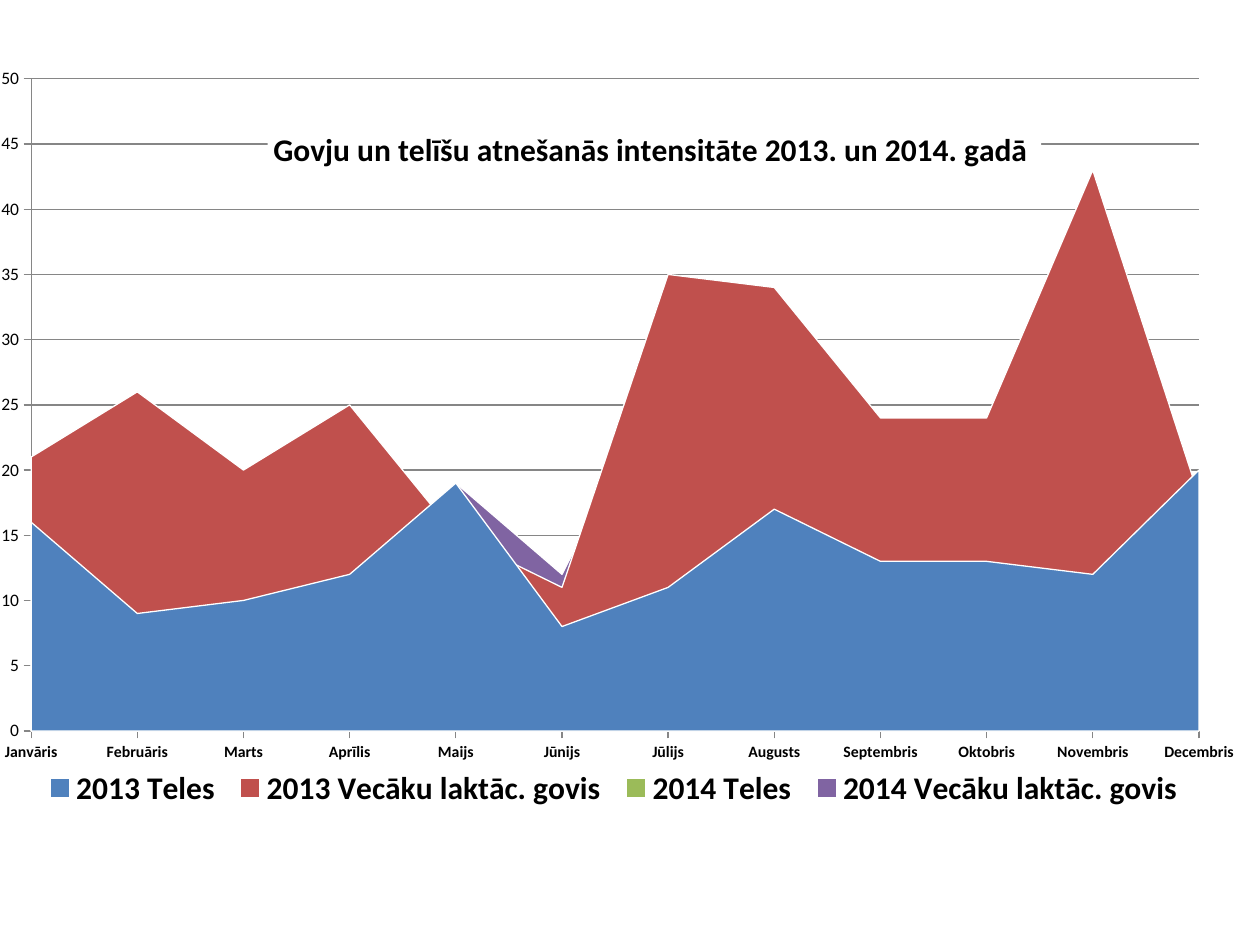
from dataclasses import dataclass

from lxml.etree import SubElement
from pptx import Presentation
from pptx.chart.data import CategoryChartData
from pptx.dml.color import RGBColor
from pptx.enum.chart import XL_CHART_TYPE, XL_LEGEND_POSITION, XL_TICK_MARK
from pptx.oxml import parse_xml
from pptx.oxml.ns import nsdecls, qn
from pptx.util import Cm, Pt

BLACK = RGBColor(0x00, 0x00, 0x00)
WHITE = RGBColor(0xFF, 0xFF, 0xFF)
GRAY = RGBColor(0x86, 0x86, 0x86)
BLUE = RGBColor(0x4F, 0x81, 0xBD)
RED = RGBColor(0xC0, 0x50, 0x4D)
GREEN = RGBColor(0x9B, 0xBB, 0x59)
PURPLE = RGBColor(0x80, 0x64, 0xA2)
FACE = "Calibri"


@dataclass(frozen=True)
class Herd:
    name: str
    births: tuple
    color: RGBColor


MONTHS = (
    "Janvāris", "Februāris", "Marts", "Aprīlis", "Maijs", "Jūnijs",
    "Jūlijs", "Augusts", "Septembris", "Oktobris", "Novembris", "Decembris",
)
REST = (None,) * 3
HERDS = (
    Herd("2013 Teles", (16, 9, 10, 12, 19, 8, 11, 17, 13, 13, 12, 20), BLUE),
    Herd("2013 Vecāku laktāc. govis",
         (21, 26, 20, 25, 15, 11, 35, 34, 24, 24, 43, 18), RED),
    Herd("2014 Teles", (7, 4, 9, 5, 5, 6, 11, 33, 8) + REST, GREEN),
    Herd("2014 Vecāku laktāc. govis",
         (6, 10, 14, 8, 19, 12, 28, 11, 7) + REST, PURPLE),
)


def style(font, size: float, bold: bool = False) -> None:
    font.name = FACE
    font.size = Pt(size)
    font.bold = bold
    font.color.rgb = BLACK


def write(frame, text: str, **form) -> None:
    run = frame.paragraphs[0].add_run()
    run.text = text
    style(run.font, **form)


def place(part, inner: bool = False, **spots: float) -> None:
    for old in part.findall(qn("c:layout")):
        part.remove(old)
    layout = parse_xml(f"<c:layout {nsdecls('c')}><c:manualLayout/></c:layout>")
    rules = {"layoutTarget": "inner"} if inner else {}
    rules.update(xMode="edge", yMode="edge", **spots)
    for key, value in rules.items():
        SubElement(layout[0], qn(f"c:{key}")).set("val", str(value))
    over = part.find(qn("c:overlay"))
    if over is None:
        part.insert(0, layout)
    else:
        over.addprevious(layout)


def rule(line, color: RGBColor) -> None:
    line.color.rgb = color
    line.width = Pt(0.75)


def add_chart(slide):
    data = CategoryChartData()
    data.categories = MONTHS
    for herd in HERDS:
        data.add_series(herd.name, herd.births)
    chart = slide.shapes.add_chart(
        XL_CHART_TYPE.AREA, Cm(-0.05), Cm(1.12), Cm(25.1), Cm(16.79), data
    ).chart
    style(chart.font, 10)
    for series, herd in zip(chart.plots[0].series, HERDS):
        series.format.fill.solid()
        series.format.fill.fore_color.rgb = herd.color
        rule(series.format.line, WHITE)
    chart.plots[0].vary_by_categories = False
    place(chart.element.find(".//" + qn("c:plotArea")), inner=True,
          x=0.027, y=0.028, w=0.938, h=0.783)
    return chart


def set_axes(chart) -> None:
    for axis, size, bold in ((chart.category_axis, 9, True),
                             (chart.value_axis, 10, False)):
        style(axis.tick_labels.font, size, bold)
        axis.major_tick_mark = XL_TICK_MARK.OUTSIDE
        axis.minor_tick_mark = XL_TICK_MARK.NONE
        rule(axis.format.line, GRAY)
    chart.category_axis.has_major_gridlines = False
    scale = chart.value_axis
    scale.minimum_scale, scale.maximum_scale, scale.major_unit = 0, 50, 5
    scale.has_major_gridlines = True
    rule(scale.major_gridlines.format.line, GRAY)


def set_title(chart) -> None:
    chart.has_title = True
    title = chart.chart_title
    write(title.text_frame,
          "Govju un telīšu atnešanās intensitāte 2013. un 2014. gadā ",
          size=18, bold=True)
    title.format.fill.solid()
    title.format.fill.fore_color.rgb = WHITE
    part = chart.element.find(".//" + qn("c:title"))
    part.find(qn("c:overlay")).set("val", "1")
    place(part, x=0.217, y=0.08)


def set_legend(chart) -> None:
    chart.has_legend = True
    chart.legend.position = XL_LEGEND_POSITION.RIGHT
    chart.legend.include_in_layout = False
    style(chart.legend.font, 18, True)
    place(chart.element.find(".//" + qn("c:legend")),
          x=0.03, y=0.85, w=0.93, h=0.06)


def main() -> None:
    """Build the slide on cow and heifer calving by month."""
    deck = Presentation()
    deck.slide_width, deck.slide_height = Cm(25.4), Cm(19.05)
    slide = deck.slides.add_slide(deck.slide_layouts[6])
    chart = add_chart(slide)
    set_axes(chart)
    set_title(chart)
    set_legend(chart)
    deck.save("out.pptx")


if __name__ == "__main__":
    main()
